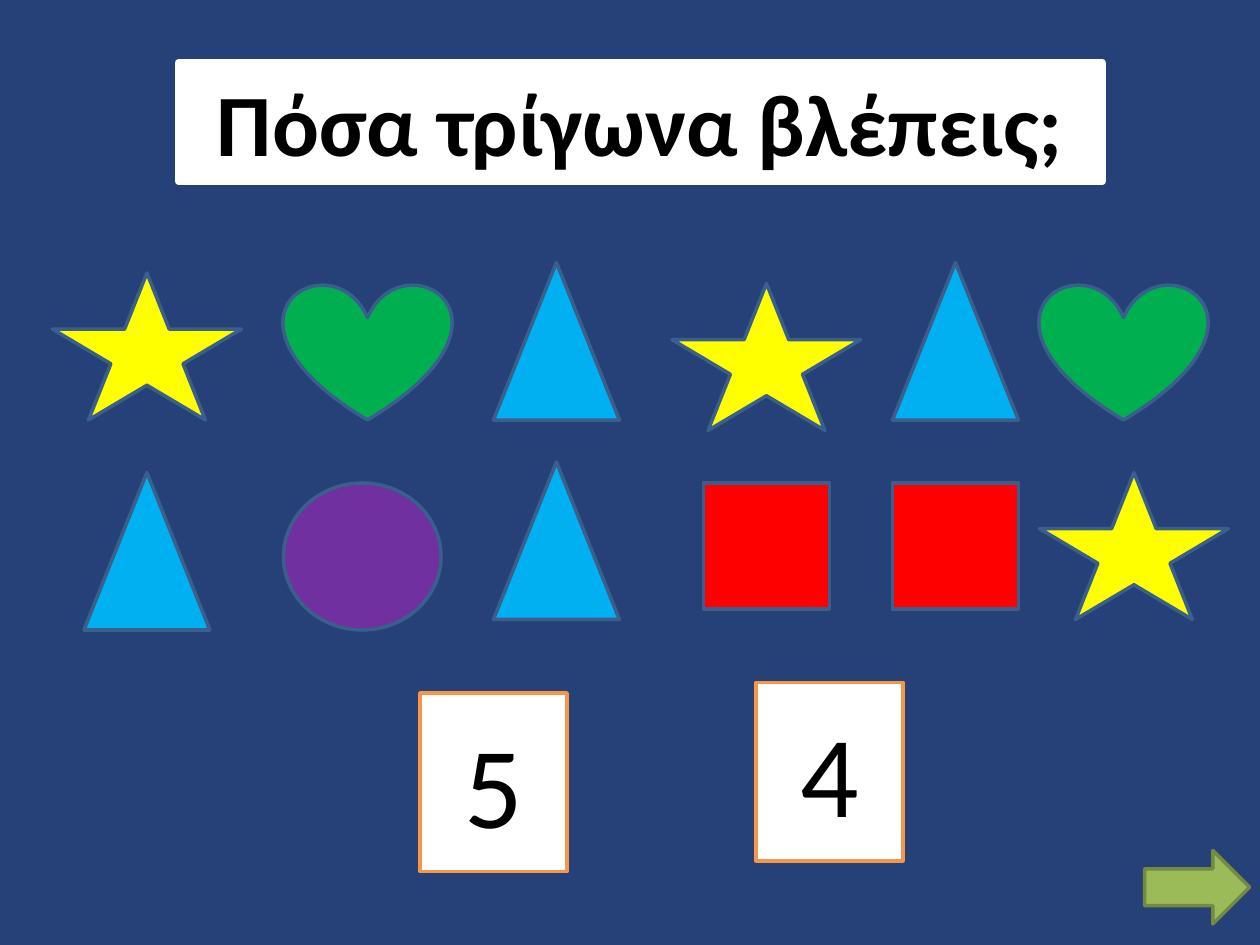
from lxml.etree import SubElement
from pptx import Presentation
from pptx.dml.color import RGBColor
from pptx.enum.shapes import MSO_SHAPE
from pptx.enum.text import MSO_ANCHOR, MSO_AUTO_SIZE, PP_ALIGN
from pptx.oxml.ns import qn
from pptx.util import Emu, Pt

PX = 9525
NAVY = RGBColor(0x26, 0x41, 0x78)
WHITE = RGBColor(0xFF, 0xFF, 0xFF)
BLACK = RGBColor(0x00, 0x00, 0x00)
YELLOW = RGBColor(0xFF, 0xFF, 0x00)
GREEN = RGBColor(0x00, 0xB0, 0x50)
SKY = RGBColor(0x00, 0xB0, 0xF0)
PURPLE = RGBColor(0x70, 0x30, 0xA0)
RED = RGBColor(0xFF, 0x00, 0x00)
EDGE = RGBColor(0x3A, 0x5F, 0x8C)
ORANGE = RGBColor(0xF7, 0x96, 0x46)
OLIVE = RGBColor(0x9B, 0xBB, 0x59)
DARK_OLIVE = RGBColor(0x73, 0x8A, 0x42)

FIGURES = {
    "star": (MSO_SHAPE.STAR_5_POINT, 144, 112, YELLOW),
    "heart": (MSO_SHAPE.HEART, 128, 104, GREEN),
    "triangle": (MSO_SHAPE.ISOSCELES_TRIANGLE, 96, 120, SKY),
    "circle": (MSO_SHAPE.OVAL, 120, 112, PURPLE),
    "square": (MSO_SHAPE.RECTANGLE, 96, 96, RED),
}
PLACES = [
    ("star", 40, 208), ("heart", 216, 216), ("triangle", 376, 200),
    ("star", 512, 216), ("triangle", 680, 200), ("heart", 792, 216),
    ("triangle", 64, 360), ("circle", 216, 368), ("triangle", 376, 352),
    ("square", 536, 368), ("square", 680, 368), ("star", 792, 360),
]
ANSWERS = [("5", 320, 528), ("4", 576, 520)]


def px(n):
    """Turn pixels into EMU."""
    return Emu(n * PX)


def add_figure(s, kind, x, y, w, h, fill, line, weight=2):
    """Add a filled and outlined preset shape."""
    sp = s.shapes.add_shape(kind, px(x), px(y), px(w), px(h))
    sp.shadow.inherit = False
    sp.fill.solid()
    sp.fill.fore_color.rgb = fill
    sp.line.color.rgb = line
    sp.line.width = Pt(weight)
    return sp


def set_label(sp, text, size, anchor, bold=False):
    """Write centred black text in a shape and return its run."""
    tf = sp.text_frame
    tf.word_wrap = True
    tf.vertical_anchor = anchor
    p = tf.paragraphs[0]
    p.text = text
    p.alignment = PP_ALIGN.CENTER
    r = p.runs[0]
    r.font.name = "Calibri"
    r.font.size = Pt(size)
    r.font.bold = bold
    r.font.color.rgb = BLACK
    return r


def outline_text(r, color, weight):
    """Draw a thin line around the letters of a run."""
    rpr = r.font.fill._xPr
    ln = SubElement(rpr, qn("a:ln"), w=str(Pt(weight)))
    fill = SubElement(ln, qn("a:solidFill"))
    SubElement(fill, qn("a:srgbClr"), val=str(color))
    rpr.insert(0, ln)


def add_title(s, text):
    """Add the white question banner."""
    sp = add_figure(s, MSO_SHAPE.RECTANGLE, 136, 48, 704, 90, WHITE, WHITE, 4.5)
    r = set_label(sp, text, 50, MSO_ANCHOR.TOP, bold=True)
    sp.text_frame.auto_size = MSO_AUTO_SIZE.SHAPE_TO_FIT_TEXT
    outline_text(r, BLACK, 0.75)


def add_answer(s, text, x, y):
    """Add one answer card."""
    sp = add_figure(s, MSO_SHAPE.RECTANGLE, x, y, 112, 136, WHITE, ORANGE)
    set_label(sp, text, 66, MSO_ANCHOR.MIDDLE)


def main():
    """Build the counting slide."""
    prs = Presentation()
    prs.slide_width, prs.slide_height = px(960), px(720)
    s = prs.slides.add_slide(prs.slide_layouts[6])
    s.background.fill.solid()
    s.background.fill.fore_color.rgb = NAVY
    for name, x, y in PLACES:
        kind, w, h, fill = FIGURES[name]
        add_figure(s, kind, x, y, w, h, fill, EDGE)
    for text, x, y in ANSWERS:
        add_answer(s, text, x, y)
    add_title(s, "Πόσα τρίγωνα βλέπεις;")
    add_figure(s, MSO_SHAPE.RIGHT_ARROW, 872, 648, 80, 56, OLIVE, DARK_OLIVE)
    prs.save("out.pptx")


if __name__ == "__main__":
    main()
